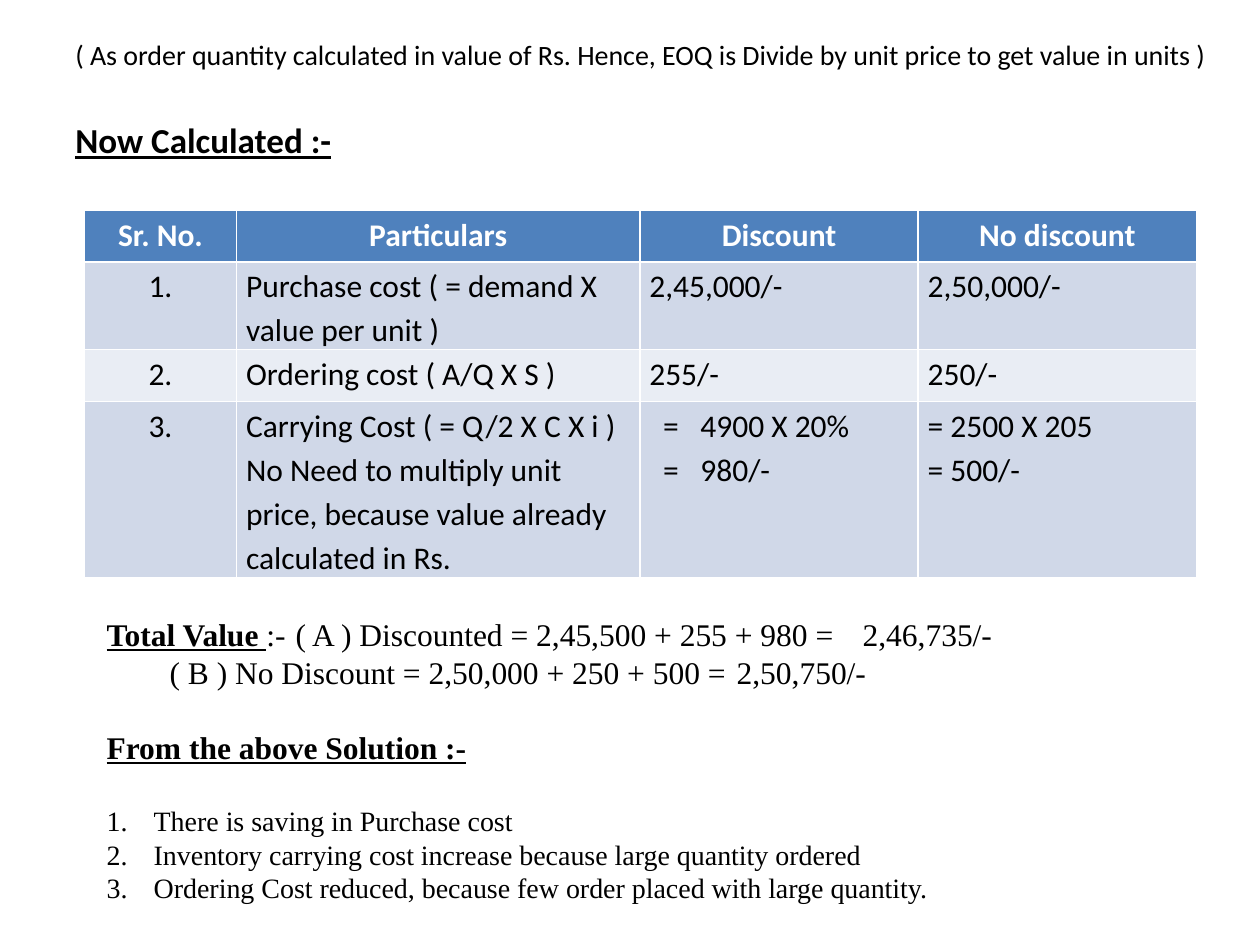
from dataclasses import dataclass

from lxml import etree
from pptx import Presentation
from pptx import util as u
from pptx.dml import color as colors
from pptx.enum import text
from pptx.oxml import ns


@dataclass(frozen=True)
class Theme:
    ink: str = "000000"
    header_ink: str = "FFFFFF"
    header_fill: str = "4F81BD"
    bands: tuple = ("D0D8E8", "E9EDF4")
    sans: str = "Calibri"
    serif: str = "Times New Roman"
    heading: int = 20
    body: int = 18
    small: int = 16


theme = Theme()


def write(frame, content, font=theme.sans, size=theme.body, ink=theme.ink, strong="",
          bold=False, underline=False, align=text.PP_ALIGN.LEFT, before=0, line=1.0,
          indent=0, hanging=0, stops=(), numbered=False):
    paragraph = frame.paragraphs[0]
    if paragraph.runs:
        paragraph = frame.add_paragraph()
    paragraph.alignment = align
    paragraph.space_before = u.Pt(before)
    paragraph.line_spacing = line
    properties = paragraph._p.get_or_add_pPr()
    properties.set("marL", str(u.Cm(indent)))
    properties.set("indent", str(u.Cm(-hanging)))
    if numbered:
        etree.SubElement(properties, ns.qn("a:buAutoNum"), type="arabicPeriod")
    else:
        etree.SubElement(properties, ns.qn("a:buNone"))
    if stops:
        tabs = etree.SubElement(properties, ns.qn("a:tabLst"))
        for stop in stops:
            etree.SubElement(tabs, ns.qn("a:tab"), pos=str(u.Cm(stop)), algn="l")
    for part, marked in ((strong, True), (content, False)):
        if part:
            run = paragraph.add_run()
            run.text = part
            run.font.name = font
            run.font.size = u.Pt(size)
            run.font.bold = bold or marked
            run.font.underline = underline or marked
            run.font.color.rgb = colors.RGBColor.from_string(ink)


presentation = Presentation()
presentation.slide_width = u.Cm(25.4)
presentation.slide_height = u.Cm(19.05)
slide = presentation.slides.add_slide(presentation.slide_layouts[6])

intro = slide.shapes.add_textbox(u.Cm(1.27), u.Cm(0.64), u.Cm(23.5), u.Cm(11.43)).text_frame
intro.word_wrap = True
write(intro, "( As order quantity calculated in value of Rs. Hence, EOQ is Divide by unit price "
      "to get value in units )", size=theme.small)
write(intro, "Now Calculated :-", size=theme.heading, bold=True, underline=True, before=27)

rows = [
    ["Sr. No.", "Particulars", "Discount", "No discount"],
    ["1.", "Purchase cost ( = demand X value per unit )", "2,45,000/-", "2,50,000/-"],
    ["2.", "Ordering cost ( A/Q X S )", "255/-", "250/-"],
    ["3.",
     "Carrying Cost ( = Q/2 X C X i )\n"
     "No Need to multiply unit price, because value already calculated in Rs.",
     "=\t4900 X 20%\n=\t980/-",
     "= 2500 X 205\n= 500/-"],
]
column_widths = [3.07, 8.13, 5.61, 5.61]
row_heights = [1.04, 1.77, 1.04, 3.56]

table = slide.shapes.add_table(len(rows), len(column_widths), u.Cm(1.7), u.Cm(4.24),
                               u.Cm(sum(column_widths)), u.Cm(sum(row_heights))).table
for column, width in zip(table.columns, column_widths):
    column.width = u.Cm(width)
for row, height in zip(table.rows, row_heights):
    row.height = u.Cm(height)

for row_index, row in enumerate(rows):
    header = row_index == 0
    fill = theme.header_fill if header else theme.bands[(row_index - 1) % 2]
    for column_index, content in enumerate(row):
        cell = table.cell(row_index, column_index)
        cell.fill.solid()
        cell.fill.fore_color.rgb = colors.RGBColor.from_string(fill)
        cell.margin_left = cell.margin_right = u.Cm(0.19)
        cell.margin_top = cell.margin_bottom = 0
        centred = header or column_index == 0
        for entry in content.split("\n"):
            aligned = "\t" in entry
            write(cell.text_frame, entry, bold=header, line=1.15,
                  ink=theme.header_ink if header else theme.ink,
                  align=text.PP_ALIGN.CENTER if centred else text.PP_ALIGN.LEFT,
                  indent=1.03 if aligned else 0, hanging=0.75 if aligned else 0)

summary = slide.shapes.add_textbox(u.Cm(1.9), u.Cm(12.27), u.Cm(22.66), u.Cm(6.15)).text_frame
summary.word_wrap = True
total_stops = (4.02, 15.7)
write(summary, ":-\t( A ) Discounted = 2,45,500 + 255 + 980 =\t2,46,735/-",
      strong="Total Value ", font=theme.serif, stops=total_stops)
write(summary, "\t( B ) No Discount = 2,50,000 + 250 + 500 =\t2,50,750/-",
      font=theme.serif, stops=total_stops)
write(summary, "From the above Solution :-", font=theme.serif, bold=True, underline=True,
      before=21.6)

conclusions = [
    "There is saving in Purchase cost",
    "Inventory carrying cost increase because large quantity ordered",
    "Ordering Cost reduced, because few order placed with large quantity.",
]
for index, conclusion in enumerate(conclusions):
    write(summary, conclusion, font=theme.serif, size=theme.small, indent=0.95, hanging=0.95,
          numbered=True, before=21.6 if index == 0 else 0)

presentation.save("out.pptx")
